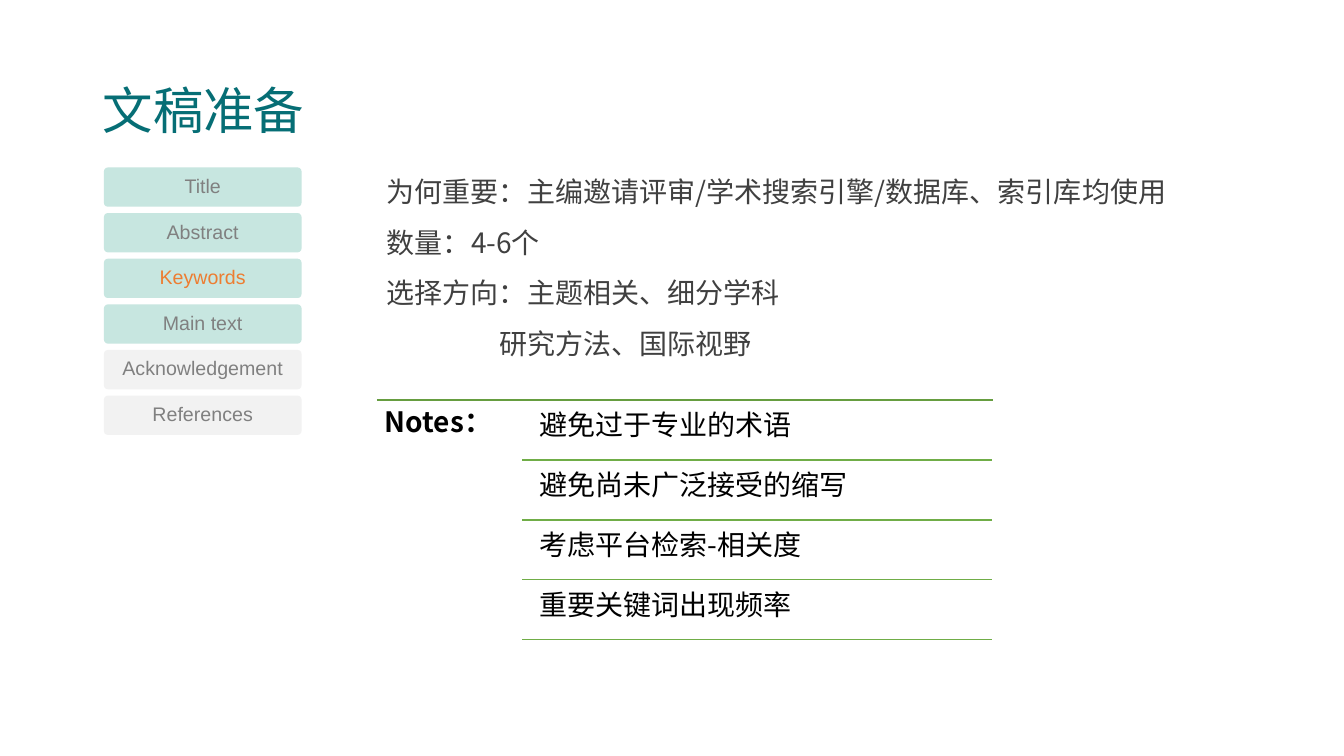
from lxml import etree
from pptx import Presentation
from pptx.dml.color import RGBColor as Rgb
from pptx.enum.shapes import MSO_CONNECTOR as Link, MSO_SHAPE as Shape
from pptx.enum.text import MSO_ANCHOR as Anchor, PP_ALIGN as Align
from pptx.oxml.ns import qn
from pptx.util import Cm, Pt

HAN = "Noto Sans CJK SC"
TEAL, DARK, BLACK = "066E75", "404040", "000000"
GRAY, ORANGE = "808080", "ED7D31"
MINT, PALE = "C7E6E0", "F2F2F2"
GREEN, MOSS = "70AD47", "669D40"

TABS = [
    ("Title", MINT, GRAY),
    ("Abstract", MINT, GRAY),
    ("Keywords", MINT, ORANGE),
    ("Main text", MINT, GRAY),
    ("Acknowledgement", PALE, GRAY),
    ("References", PALE, GRAY),
]
# Text and left indent in cm
LINES = [
    ("为何重要：主编邀请评审/学术搜索引擎/数据库、索引库均使用", 0),
    ("数量：4-6个", 0),
    ("选择方向：主题相关、细分学科", 0),
    ("研究方法、国际视野", 2.84),
]
NOTES = ["避免过于专业的术语", "避免尚未广泛接受的缩写",
         "考虑平台检索-相关度", "重要关键词出现频率"]


def hue(code):
    return Rgb.from_string(code)


def write(para, text, size, color, face=HAN, bold=None, space=0.9):
    """Add one run, with the same Chinese font everywhere."""
    para.line_spacing = space
    run = para.add_run()
    run.text = text
    font = run.font
    font.size, font.name, font.bold = Pt(size), face, bold
    font.color.rgb = hue(color)
    east = etree.SubElement(font._element, qn("a:ea"))
    east.set("typeface", HAN)


def inset(frame, size):
    frame.margin_left = frame.margin_right = Cm(size)
    frame.margin_top = frame.margin_bottom = Cm(size)


def add_box(slide, left, top, width, height):
    box = slide.shapes.add_textbox(Cm(left), Cm(top), Cm(width), Cm(height))
    box.text_frame.word_wrap = True
    return box.text_frame


def add_note(slide, text, left, top, width, height, bold=None):
    frame = add_box(slide, left, top, width, height)
    inset(frame, 0.2)
    write(frame.paragraphs[0], text, 20, BLACK, bold=bold)


def add_rule(slide, left, right, top, color):
    rule = slide.shapes.add_connector(
        Link.STRAIGHT, Cm(left), Cm(top), Cm(right), Cm(top))
    rule.line.color.rgb = hue(color)
    rule.line.width = Pt(1)
    etree.SubElement(rule._element.spPr, qn("a:effectLst"))


def add_tab(slide, text, top, fill, color):
    tab = slide.shapes.add_shape(
        Shape.ROUNDED_RECTANGLE, Cm(2.62), Cm(top), Cm(4.98), Cm(0.99))
    tab.adjustments[0] = 0.1
    tab.shadow.inherit = False
    tab.fill.solid()
    tab.fill.fore_color.rgb = hue(fill)
    tab.line.fill.background()
    frame = tab.text_frame
    frame.word_wrap = True
    frame.vertical_anchor = Anchor.MIDDLE
    inset(frame, 0.03)
    para = frame.paragraphs[0]
    para.alignment = Align.CENTER
    write(para, text, 14, color, "Arial")


def add_body(slide):
    frame = add_box(slide, 9.5, 3.86, 23.39, 5.9)
    for i, (text, indent) in enumerate(LINES):
        para = frame.add_paragraph() if i else frame.paragraphs[0]
        if indent:
            para._p.get_or_add_pPr().set("marL", str(Cm(indent)))
        write(para, text, 20, DARK, space=1.5)


def main():
    deck = Presentation()
    deck.slide_width, deck.slide_height = Cm(33.87), Cm(19.05)
    slide = deck.slides.add_slide(deck.slide_layouts[6])

    # Heading
    head = add_box(slide, 2.34, 1.02, 29.21, 3.68)
    head.vertical_anchor = Anchor.MIDDLE
    write(head.paragraphs[0], "文稿准备", 36, TEAL, "Arial")

    # Key points
    add_body(slide)

    # Notes with ruled rows
    top, step = 10.08, 1.51
    add_rule(slide, 9.5, 25.02, top, MOSS)
    add_note(slide, "Notes：", 9.5, top, 3.66, 6.07, True)
    for i, text in enumerate(NOTES):
        row = top + i * step
        add_note(slide, text, 13.39, row + 0.08, 11.63, 1.42)
        add_rule(slide, 13.16, 25, row + step, GREEN)

    # Section tabs
    for i, (text, fill, color) in enumerate(TABS):
        add_tab(slide, text, 4.22 + i * 1.15, fill, color)

    deck.save("out.pptx")


if __name__ == "__main__":
    main()
